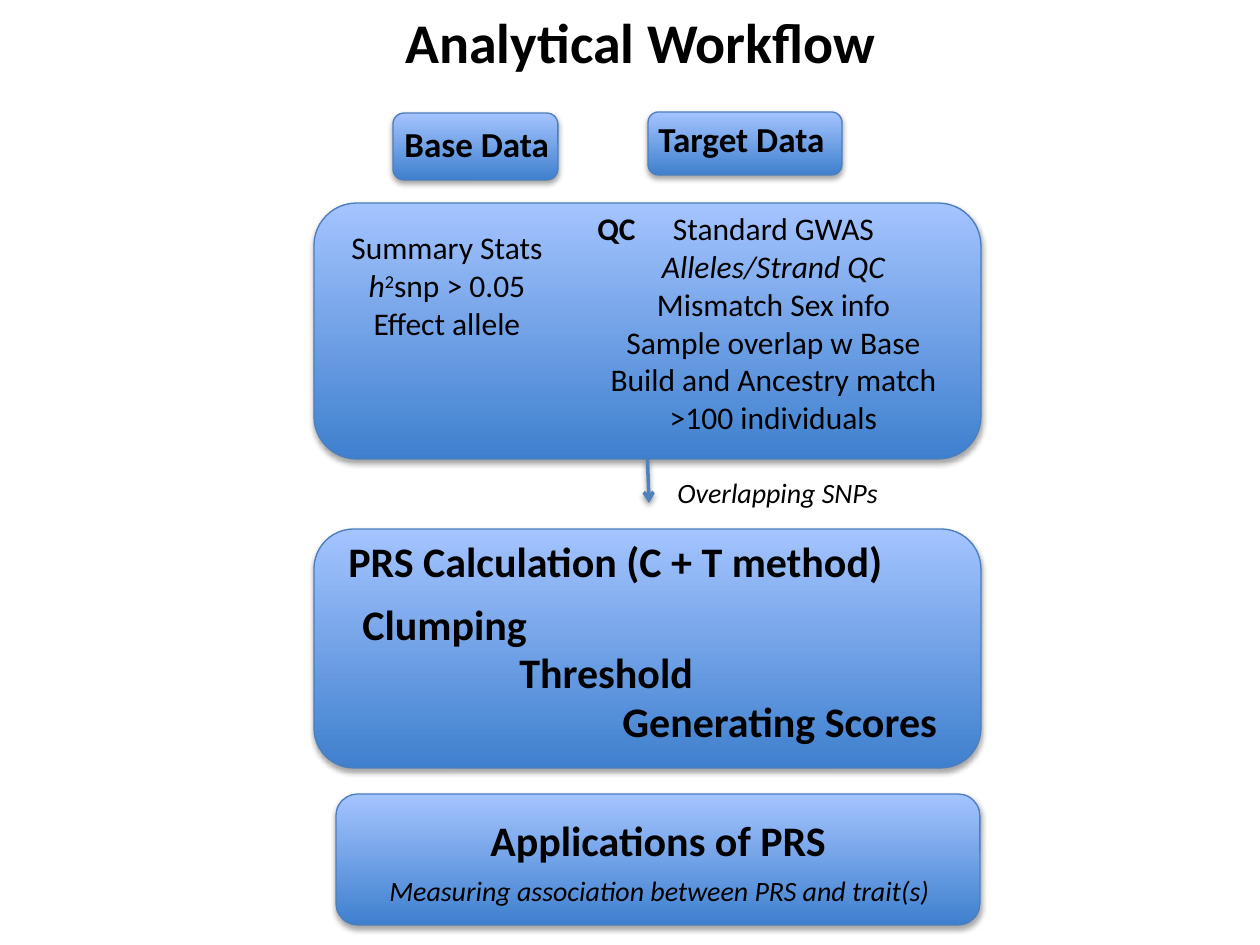
import pptx
import pptx.util
import pptx.dml.color
import pptx.enum.shapes
import pptx.enum.text
import pptx.oxml
import pptx.oxml.ns
from dataclasses import dataclass

EMU_PER_PX = 914400 / 126


@dataclass(frozen=True)
class Theme:
    font: str = "Calibri"
    ink: str = "000000"
    panel_bottom: str = "3F80CE"
    panel_top: str = "A4C4FF"
    panel_edge: str = "4B7EBC"
    arrow: str = "4F81BD"
    title: int = 32
    heading: int = 24
    label: int = 20
    body: int = 18
    caption: int = 16


def px(value):
    return pptx.util.Emu(round(value * EMU_PER_PX))


def rgb(value):
    return pptx.dml.color.RGBColor.from_string(value)


class WorkflowSlide:
    def __init__(self, deck, theme):
        self.theme = theme
        self.slide = deck.slides.add_slide(deck.slide_layouts[6])

    def drop_shadow(self, properties, distance, opacity):
        """Replace the inherited effects with a soft shadow below."""
        for effects in properties.findall(pptx.oxml.ns.qn("a:effectLst")):
            properties.remove(effects)
        properties.append(pptx.oxml.parse_xml(
            f'<a:effectLst {pptx.oxml.ns.nsdecls("a")}>'
            f'<a:outerShdw blurRad="40000" dist="{distance}" dir="5400000" rotWithShape="0">'
            f'<a:srgbClr val="000000"><a:alpha val="{opacity}000"/></a:srgbClr>'
            '</a:outerShdw></a:effectLst>'))

    def panel(self, left, top, width, height):
        panel = self.slide.shapes.add_shape(
            pptx.enum.shapes.MSO_SHAPE.ROUNDED_RECTANGLE,
            px(left), px(top), px(width), px(height))
        panel.fill.gradient()
        panel.fill.gradient_angle = 90
        colors = (self.theme.panel_bottom, self.theme.panel_top)
        for position, (stop, color) in enumerate(zip(panel.fill.gradient_stops, colors)):
            stop.position = position
            stop.color.rgb = rgb(color)
        panel.line.color.rgb = rgb(self.theme.panel_edge)
        panel.line.width = pptx.util.Pt(0.75)
        panel.shadow.inherit = False
        self.drop_shadow(panel._element.spPr, 23000, 35)
        return panel

    def text(self, left, top, width, height, lines, size, bold=False, italic=False,
             centered=False):
        """Each line is a string or a list of (text, style) runs."""
        box = self.slide.shapes.add_textbox(px(left), px(top), px(width), px(height))
        frame = box.text_frame
        frame.word_wrap = False
        frame.auto_size = pptx.enum.text.MSO_AUTO_SIZE.SHAPE_TO_FIT_TEXT
        for index, line in enumerate(lines):
            paragraph = frame.add_paragraph() if index else frame.paragraphs[0]
            if centered:
                paragraph.alignment = pptx.enum.text.PP_ALIGN.CENTER
            for words, style in [(line, "")] if isinstance(line, str) else line:
                run = paragraph.add_run()
                run.text = words
                run.font.name = self.theme.font
                run.font.size = pptx.util.Pt(size)
                run.font.color.rgb = rgb(self.theme.ink)
                run.font.bold = bold
                run.font.italic = italic or style == "italic"
                if style == "superscript":
                    run.font._element.set("baseline", "30000")

    def arrow_from(self, panel, end_x, end_y):
        arrow = self.slide.shapes.add_connector(
            pptx.enum.shapes.MSO_CONNECTOR.STRAIGHT,
            px(end_x), px(end_y), px(end_x), px(end_y))
        arrow.begin_connect(panel, 2)
        arrow.line.color.rgb = rgb(self.theme.arrow)
        arrow.line.width = pptx.util.Pt(2)
        arrow.line._get_or_add_ln().append(pptx.oxml.parse_xml(
            f'<a:tailEnd {pptx.oxml.ns.nsdecls("a")} type="arrow"/>'))
        self.drop_shadow(arrow._element.spPr, 20000, 38)


def main():
    deck = pptx.Presentation()
    deck.slide_width, deck.slide_height = px(1260), px(945)
    theme = Theme()
    page = WorkflowSlide(deck, theme)

    # Panels
    page.panel(648, 112, 194, 63)
    page.panel(393, 113, 165, 67)
    page.panel(336, 794, 644, 131)
    page.panel(314, 529, 667, 239)
    quality_control = page.panel(314, 203, 667, 256)

    # Title and data sources
    page.text(393, 1, 503, 81, ["Analytical Workflow"], theme.title, bold=True)
    page.text(392, 116, 173, 55, ["Base Data"], theme.label, bold=True)
    page.text(646, 111, 197, 55, ["Target Data"], theme.label, bold=True)

    # Quality control
    page.text(585, 203, 64, 50, ["QC"], theme.body, bold=True)
    page.text(336, 222, 222, 127, [
        "Summary Stats",
        [("h", "italic"), ("2", "superscript"), ("snp > 0.05", "")],
        "Effect allele",
    ], theme.body, centered=True)
    page.text(596, 203, 355, 242, [
        "Standard GWAS",
        [("Alleles/Strand QC", "italic")],
        "Mismatch Sex info",
        "Sample overlap w Base",
        "Build and Ancestry match",
        ">100 individuals",
    ], theme.body, centered=True)

    # Step to the shared SNPs
    page.arrow_from(quality_control, 649, 503)
    page.text(665, 469, 236, 47, ["Overlapping SNPs"], theme.caption, italic=True)

    # Score calculation and applications
    for left, top, width, heading in (
        (336, 529, 566, "PRS Calculation (C + T method)"),
        (350, 592, 192, "Clumping"),
        (507, 640, 202, "Threshold"),
        (610, 689, 345, "Generating Scores"),
        (478, 808, 365, "Applications of PRS"),
    ):
        page.text(left, top, width, 63, [heading], theme.heading, bold=True)
    page.text(377, 867, 580, 47, ["Measuring association between PRS and trait(s)"],
              theme.caption, italic=True)

    deck.save("out.pptx")


if __name__ == "__main__":
    main()
